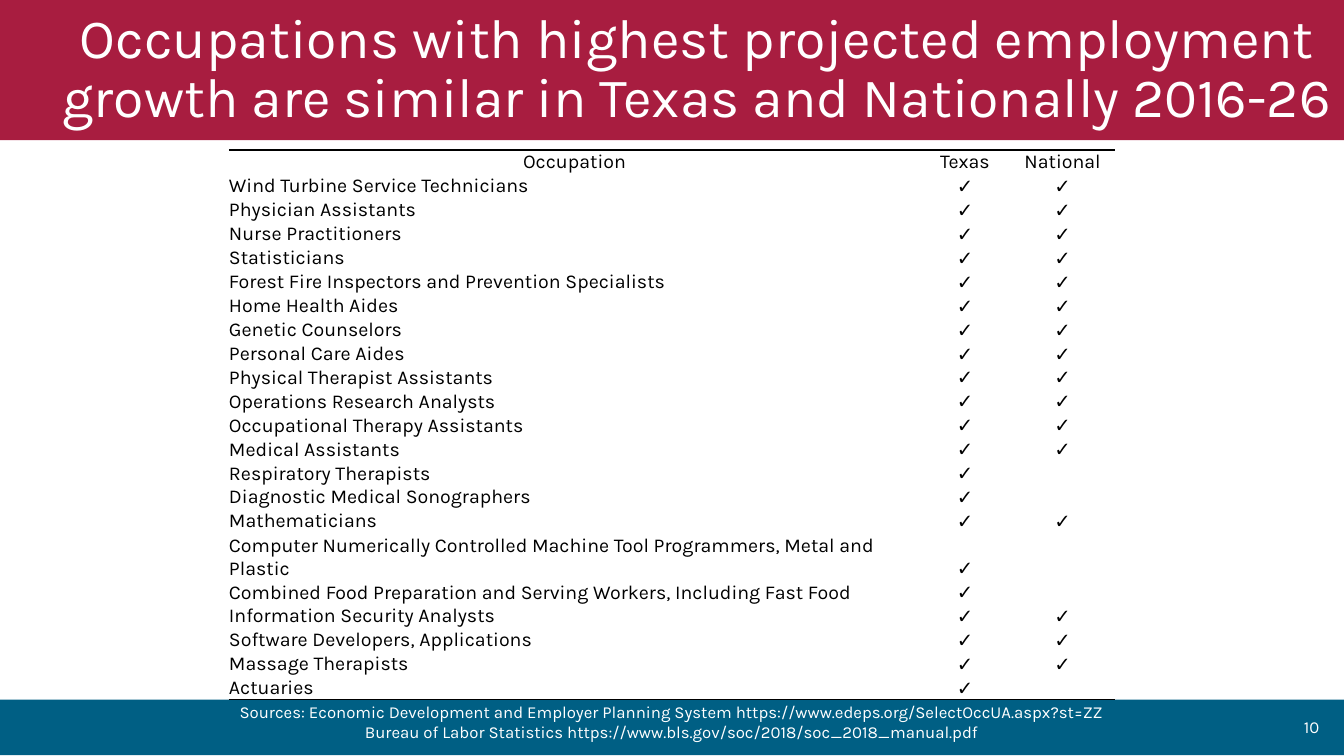
"""Build the slide comparing fast-growing occupations in Texas and nationally."""
import dataclasses

import lxml.etree
import pptx
import pptx.dml.color
import pptx.enum.shapes
import pptx.enum.text
import pptx.oxml.ns
import pptx.util

Cm = pptx.util.Cm
Pt = pptx.util.Pt
qn = pptx.oxml.ns.qn
ALIGN = pptx.enum.text.PP_ALIGN
ANCHOR = pptx.enum.text.MSO_ANCHOR

FONT = "Karla"
CHECK_FONT = "Arial"
CHECK = "✓"
RED, BLUE, WHITE, BLACK = "A81D40", "005F84", "FFFFFF", "000000"
SLIDE_WIDTH, SLIDE_HEIGHT = 33.87, 19.05
COLUMN_WIDTHS = (17.42, 2.26, 2.66)
TABLE_LEFT, TABLE_TOP, TABLE_HEIGHT = 5.77, 3.78, 13.86
HEADER_HEIGHT, TWO_LINE_HEIGHT = 0.6, 1.19
HEADINGS = ("Occupation", "Texas", "National")
PLAIN_TABLE_STYLE = "{2D5ABB26-0587-4C30-8999-92F81FD0307C}"


@dataclasses.dataclass
class Occupation:
    name: str
    national: bool = True
    two_lines: bool = False


@dataclasses.dataclass
class Caption:
    lines: list[str]
    left: float
    top: float
    width: float
    height: float
    alignment: ALIGN


OCCUPATIONS = [
    Occupation("Wind Turbine Service Technicians"),
    Occupation("Physician Assistants"),
    Occupation("Nurse Practitioners"),
    Occupation("Statisticians"),
    Occupation("Forest Fire Inspectors and Prevention Specialists"),
    Occupation("Home Health Aides"),
    Occupation("Genetic Counselors"),
    Occupation("Personal Care Aides"),
    Occupation("Physical Therapist Assistants"),
    Occupation("Operations Research Analysts"),
    Occupation("Occupational Therapy Assistants"),
    Occupation("Medical Assistants"),
    Occupation("Respiratory Therapists", national=False),
    Occupation("Diagnostic Medical Sonographers", national=False),
    Occupation("Mathematicians"),
    Occupation(
        "Computer Numerically Controlled Machine Tool Programmers, Metal and Plastic",
        national=False,
        two_lines=True,
    ),
    Occupation(
        "Combined Food Preparation and Serving Workers, Including Fast Food",
        national=False,
    ),
    Occupation("Information Security Analysts"),
    Occupation("Software Developers, Applications"),
    Occupation("Massage Therapists"),
    Occupation("Actuaries", national=False),
]

CAPTIONS = [
    Caption(
        [
            "Sources: Economic Development and Employer Planning System "
            "https://www.edeps.org/SelectOccUA.aspx?st=ZZ",
            "Bureau of Labor Statistics https://www.bls.gov/soc/2018/soc_2018_manual.pdf",
        ],
        5.21, 17.64, 23.44, 1.1, ALIGN.CENTER,
    ),
    Caption(["10"], 25.88, 17.81, 7.62, 1.02, ALIGN.RIGHT),
]


def color(value: str) -> pptx.dml.color.RGBColor:
    return pptx.dml.color.RGBColor.from_string(value)


def format_paragraph(paragraph, size: float, fill: str, alignment, font: str = FONT) -> None:
    paragraph.alignment = alignment
    paragraph.font.name = font
    paragraph.font.size = Pt(size)
    paragraph.font.color.rgb = color(fill)


def add_title(slide) -> None:
    title = slide.shapes.title
    title.left, title.top = Cm(0), Cm(0)
    title.width, title.height = Cm(SLIDE_WIDTH), Cm(3.53)
    title.fill.solid()
    title.fill.fore_color.rgb = color(RED)
    frame = title.text_frame
    frame.text = (
        "Occupations with highest projected employment growth "
        "are similar in Texas and Nationally 2016-26"
    )
    frame.word_wrap = True
    frame.auto_size = pptx.enum.text.MSO_AUTO_SIZE.NONE
    frame.vertical_anchor = ANCHOR.MIDDLE
    paragraph = frame.paragraphs[0]
    paragraph.line_spacing = 0.9
    properties = paragraph._p.get_or_add_pPr()
    properties.set("marL", str(Cm(1.27)))
    properties.set("indent", "0")
    format_paragraph(paragraph, 39.6, WHITE, ALIGN.CENTER)


def add_footer_band(slide) -> None:
    band = slide.shapes.add_shape(
        pptx.enum.shapes.MSO_SHAPE.RECTANGLE,
        Cm(0), Cm(17.63), Cm(SLIDE_WIDTH), Cm(1.4),
    )
    band.shadow.inherit = False
    band.fill.solid()
    band.fill.fore_color.rgb = color(BLUE)
    band.line.fill.background()


def add_caption(slide, caption: Caption) -> None:
    box = slide.shapes.add_textbox(
        Cm(caption.left), Cm(caption.top), Cm(caption.width), Cm(caption.height)
    )
    frame = box.text_frame
    frame.word_wrap = True
    frame.vertical_anchor = ANCHOR.MIDDLE
    frame.text = "\n".join(caption.lines)
    for paragraph in frame.paragraphs:
        format_paragraph(paragraph, 12, WHITE, caption.alignment)


def add_border(cell, side: str) -> None:
    line = lxml.etree.Element(qn(f"a:{side}"), w=str(Pt(1)))
    fill = lxml.etree.SubElement(line, qn("a:solidFill"))
    lxml.etree.SubElement(fill, qn("a:srgbClr"), val=BLACK)
    cell._tc.get_or_add_tcPr().insert(0, line)


def fill_cell(cell, text: str, alignment) -> None:
    cell.text = text
    cell.fill.background()
    cell.vertical_anchor = ANCHOR.BOTTOM
    cell.margin_left = cell.margin_right = Cm(0)
    cell.margin_top = cell.margin_bottom = Cm(0)
    font = CHECK_FONT if text == CHECK else FONT
    format_paragraph(cell.text_frame.paragraphs[0], 14, BLACK, alignment, font)


def add_occupation_table(slide) -> None:
    table = slide.shapes.add_table(
        len(OCCUPATIONS) + 1, len(HEADINGS),
        Cm(TABLE_LEFT), Cm(TABLE_TOP), Cm(sum(COLUMN_WIDTHS)), Cm(TABLE_HEIGHT),
    ).table
    table.first_row = table.horz_banding = False
    table._tbl.tblPr.find(qn("a:tableStyleId")).text = PLAIN_TABLE_STYLE
    for column, width in zip(table.columns, COLUMN_WIDTHS):
        column.width = Cm(width)
    single_rows = sum(not occupation.two_lines for occupation in OCCUPATIONS)
    row_height = (TABLE_HEIGHT - HEADER_HEIGHT - TWO_LINE_HEIGHT) / single_rows

    table.rows[0].height = Cm(HEADER_HEIGHT)
    for index, heading in enumerate(HEADINGS):
        fill_cell(table.cell(0, index), heading, ALIGN.CENTER)
        add_border(table.cell(0, index), "lnT")
    for row, occupation in enumerate(OCCUPATIONS, start=1):
        table.rows[row].height = Cm(TWO_LINE_HEIGHT if occupation.two_lines else row_height)
        texts = (occupation.name, CHECK, CHECK if occupation.national else "")
        for index, text in enumerate(texts):
            alignment = ALIGN.CENTER if index else ALIGN.LEFT
            fill_cell(table.cell(row, index), text, alignment)
    for index in range(len(HEADINGS)):
        add_border(table.cell(len(OCCUPATIONS), index), "lnB")


def main() -> None:
    presentation = pptx.Presentation()
    presentation.slide_width = Cm(SLIDE_WIDTH)
    presentation.slide_height = Cm(SLIDE_HEIGHT)
    slide = presentation.slides.add_slide(presentation.slide_layouts[5])
    add_footer_band(slide)
    for caption in CAPTIONS:
        add_caption(slide, caption)
    add_title(slide)
    add_occupation_table(slide)
    presentation.save("out.pptx")


if __name__ == "__main__":
    main()
